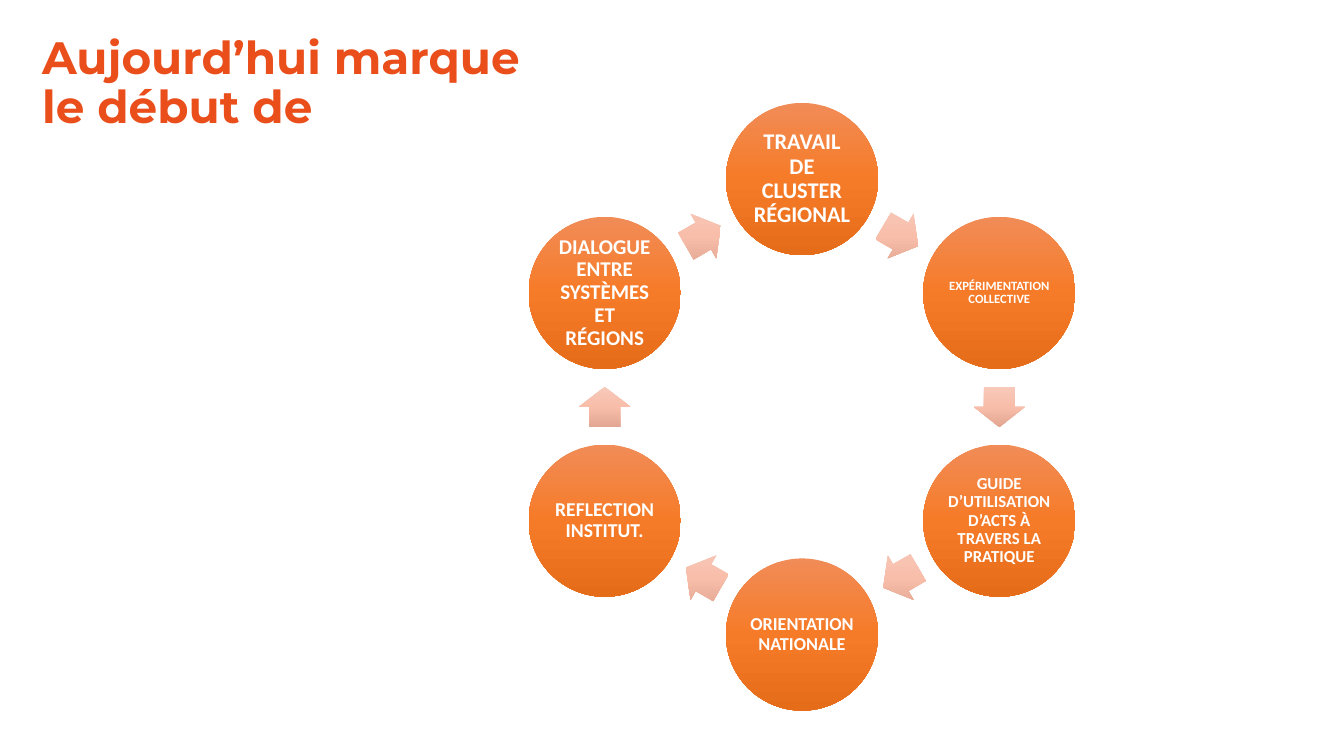
import math

import pptx
import pptx.dml.color
import pptx.enum.shapes
import pptx.enum.text
import pptx.oxml
import pptx.oxml.ns
import pptx.util

COLORS = {
    "white": "FFFFFF",
    "title": ("E94E1B", "F9B233"),
    "circle": ("F18C57", "F67B28", "E56C19"),
    "arrow": ("F7C9BA", "F8BEAA", "E2A692"),
}
STEPS = [
    ("TRAVAIL DE CLUSTER RÉGIONAL", 16),
    ("EXPÉRIMENTATION COLLECTIVE", 9),
    ("GUIDE D’UTILISATION D’ACTS À TRAVERS LA PRATIQUE", 12),
    ("ORIENTATION NATIONALE", 13),
    ("REFLECTION INSTITUT.", 14),
    ("DIALOGUE ENTRE SYSTÈMES ET RÉGIONS", 15),
]
CENTER_COLUMN, CENTER_ROW, RADIUS = 23.87, 12.11, 6.78
CIRCLE_SIZE = 4.53
ARROW_LENGTH, ARROW_BREADTH = 1.2, 1.53


class CycleSlide:
    """Draws a cycle on a slide divided into 40 columns of square cells."""

    def __init__(self, presentation):
        self.slide = presentation.slides.add_slide(presentation.slide_layouts[6])
        self.unit = presentation.slide_width / 40

    def cells(self, *counts):
        return [pptx.util.Emu(round(count * self.unit)) for count in counts]

    def gradient(self, fill, parent, colors, angle):
        fill.background()
        stops = "".join(
            f'<a:gs pos="{100000 * index // (len(colors) - 1)}"><a:srgbClr val="{color}"/></a:gs>'
            for index, color in enumerate(colors)
        )
        element = pptx.oxml.parse_xml(
            f'<a:gradFill {pptx.oxml.ns.nsdecls("a")} rotWithShape="0"><a:gsLst>{stops}</a:gsLst>'
            f'<a:lin ang="{angle * 60000}" scaled="0"/></a:gradFill>'
        )
        parent.replace(parent.find(pptx.oxml.ns.qn("a:noFill")), element)

    def label(self, shape, text, size, font_name):
        frame = shape.text_frame
        frame.word_wrap = True
        frame.vertical_anchor = pptx.enum.text.MSO_ANCHOR.MIDDLE
        frame.text = text
        paragraph = frame.paragraphs[0]
        paragraph.line_spacing = 0.9
        run = paragraph.runs[0]
        run.font.size = pptx.util.Pt(size)
        run.font.name = font_name
        run.font.bold = True
        return paragraph, run

    def title(self, text, left, top, width, height):
        box = self.slide.shapes.add_textbox(*self.cells(left, top, width, height))
        paragraph, run = self.label(box, text, 32.4, "Montserrat")
        paragraph.alignment = pptx.enum.text.PP_ALIGN.LEFT
        run_properties = box.element.find(".//" + pptx.oxml.ns.qn("a:rPr"))
        self.gradient(run.font.fill, run_properties, COLORS["title"], 20)

    def ring_shape(self, kind, angle, radius, width, height, colors):
        column = CENTER_COLUMN + radius * math.sin(math.radians(angle))
        row = CENTER_ROW - radius * math.cos(math.radians(angle))
        shape = self.slide.shapes.add_shape(
            kind, *self.cells(column - width / 2, row - height / 2, width, height)
        )
        shape.shadow.inherit = False
        shape.line.fill.background()
        self.gradient(shape.fill, shape.element.spPr, colors, 90)
        return shape

    def circle(self, text, size, angle):
        shape = self.ring_shape(
            pptx.enum.shapes.MSO_SHAPE.OVAL, angle, RADIUS,
            CIRCLE_SIZE, CIRCLE_SIZE, COLORS["circle"],
        )
        frame = shape.text_frame
        inset = pptx.util.Pt(size / 10)
        frame.margin_left = frame.margin_right = inset
        frame.margin_top = frame.margin_bottom = inset
        paragraph, run = self.label(shape, text, size, "Calibri")
        paragraph.alignment = pptx.enum.text.PP_ALIGN.CENTER
        run.font.color.rgb = pptx.dml.color.RGBColor.from_string(COLORS["white"])

    def arrow(self, angle):
        shape = self.ring_shape(
            pptx.enum.shapes.MSO_SHAPE.RIGHT_ARROW, angle,
            RADIUS * math.cos(math.pi / len(STEPS)),
            ARROW_LENGTH, ARROW_BREADTH, COLORS["arrow"],
        )
        shape.adjustments[0] = 0.6
        shape.adjustments[1] = 0.5
        shape.rotation = angle


def main():
    presentation = pptx.Presentation()
    presentation.slide_width = pptx.util.Inches(13.33)
    presentation.slide_height = pptx.util.Inches(7.5)
    cycle = CycleSlide(presentation)
    cycle.title("Aujourd’hui marque le début de", 0.96, 0.33, 15.12, 4.35)
    step_angle = 360 / len(STEPS)
    for index, (text, size) in enumerate(STEPS):
        cycle.circle(text, size, index * step_angle)
        cycle.arrow((index + 0.5) * step_angle)
    presentation.save("out.pptx")


if __name__ == "__main__":
    main()
